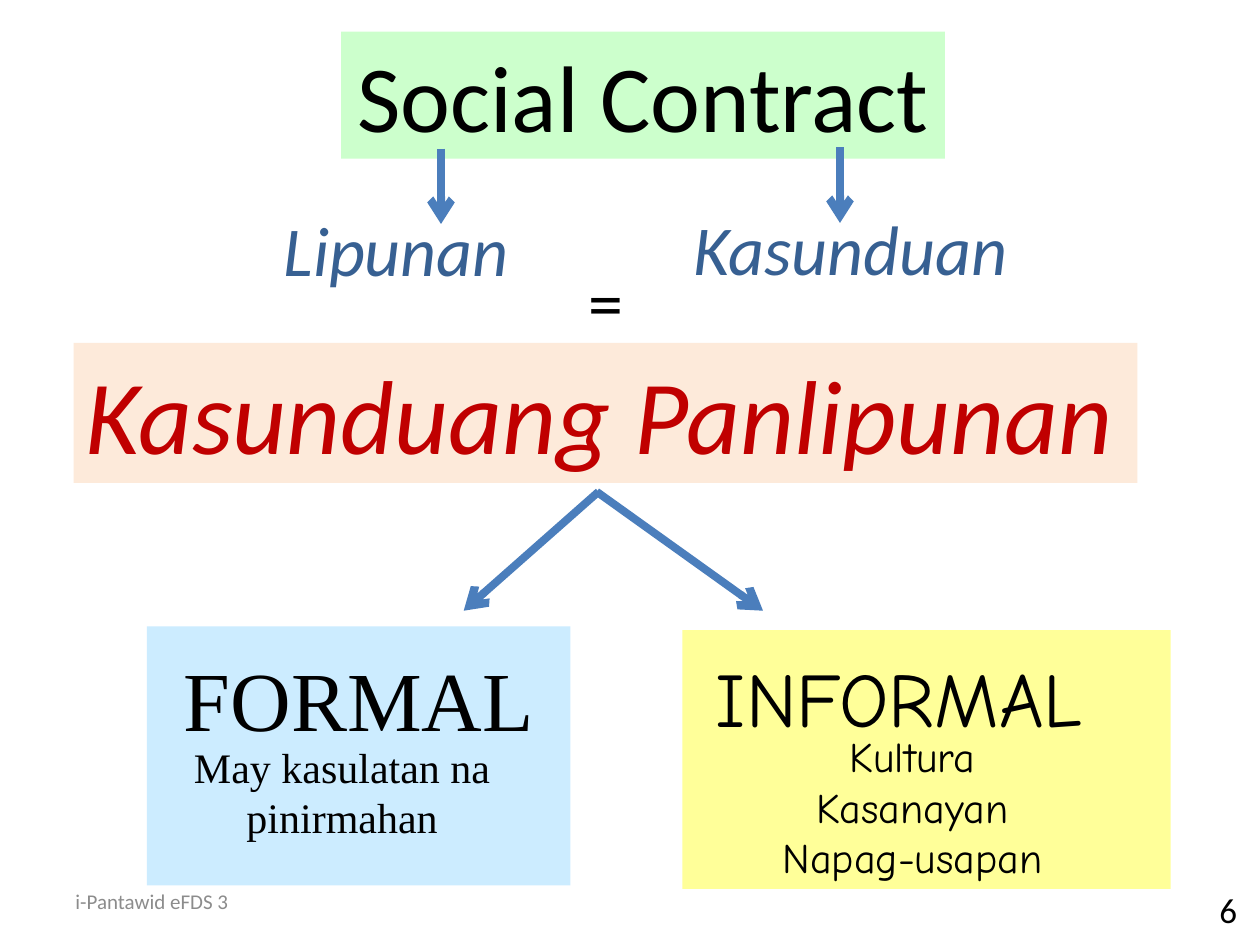
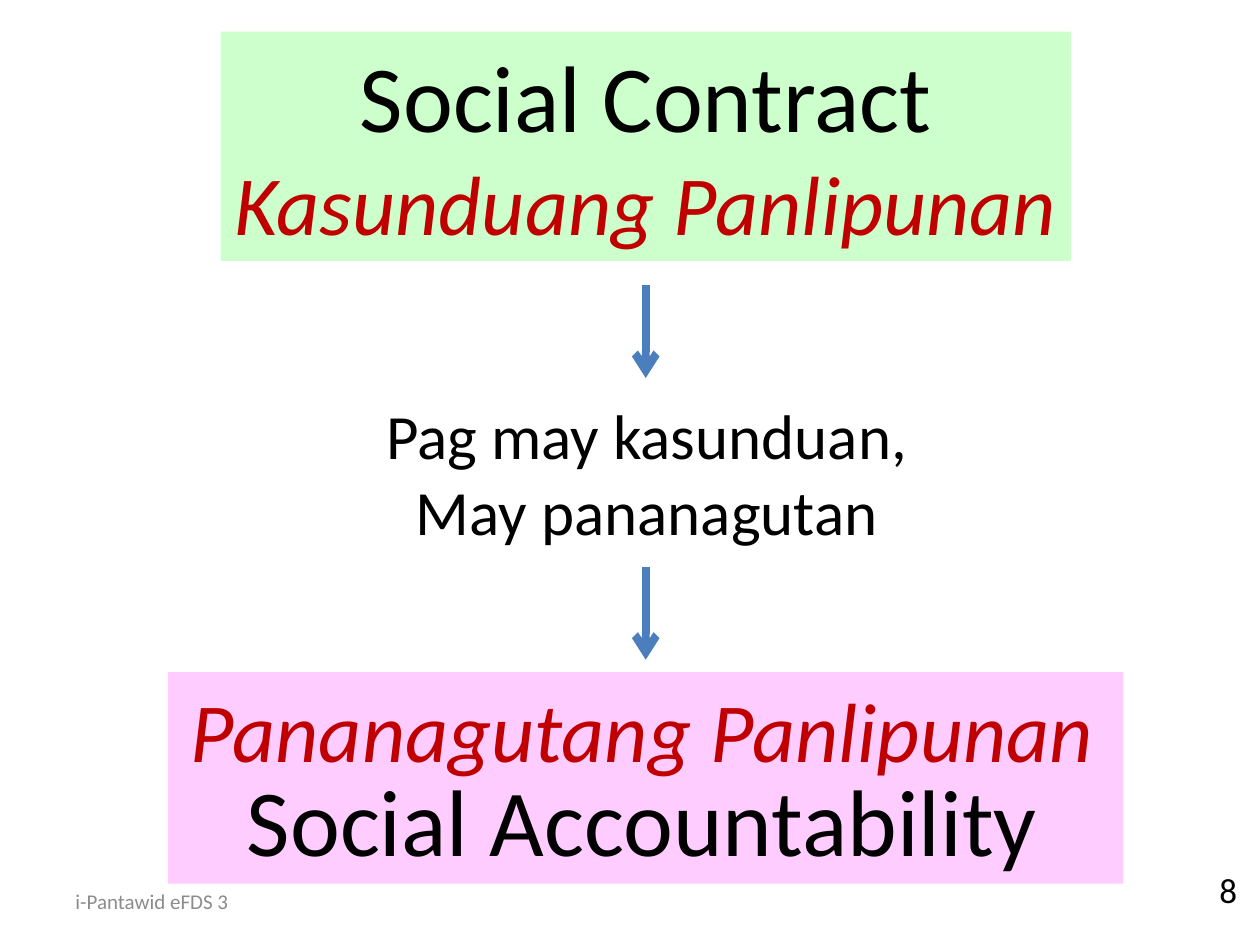
from pptx import Presentation
from pptx.dml.color import RGBColor
from pptx.enum.shapes import MSO_CONNECTOR, MSO_SHAPE
from pptx.enum.text import MSO_ANCHOR, MSO_AUTO_SIZE, PP_ALIGN
from pptx.oxml.ns import qn
from pptx.util import Pt
from lxml import etree

LEFT, MID, RIGHT = PP_ALIGN.LEFT, PP_ALIGN.CENTER, PP_ALIGN.RIGHT
TOP, CENTRE = MSO_ANCHOR.TOP, MSO_ANCHOR.MIDDLE
GROW, FIXED = MSO_AUTO_SIZE.SHAPE_TO_FIT_TEXT, MSO_AUTO_SIZE.NONE
RECT, LINE = MSO_SHAPE.RECTANGLE, MSO_CONNECTOR.STRAIGHT

BLACK = RGBColor(0x00, 0x00, 0x00)
GREY = RGBColor(0x8C, 0x8C, 0x8C)
RED = RGBColor(0xC0, 0x00, 0x00)
NAVY = RGBColor(0x37, 0x60, 0x92)
BLUE = RGBColor(0x4B, 0x7E, 0xBC)
GREEN = RGBColor(0xCC, 0xFF, 0xCC)
PEACH = RGBColor(0xFD, 0xEA, 0xDA)
YELLOW = RGBColor(0xFF, 0xFF, 0x99)
SKY = RGBColor(0xCC, 0xEC, 0xFF)
PINK = RGBColor(0xFF, 0xCC, 0xFF)

SANS, SERIF, COMIC = "Calibri", "Times New Roman", "Comic Neue"


class Deck:
    def __init__(self):
        self.file = Presentation()
        self.file.slide_width, self.file.slide_height = Pt(720), Pt(540)

    def start(self, number, top):
        self.slide = self.file.slides.add_slide(self.file.slide_layouts[5])
        self.shapes = self.slide.shapes
        self.footer("i-Pantawid eFDS 3", 36, 500.4, 12, GREY, LEFT)
        self.footer(number, 546, top, 20, BLACK, RIGHT)

    def fill_in(self, shape, lines, size, color=BLACK, font=SANS, slant=False, align=LEFT):
        frame = shape.text_frame
        frame.text = "\n".join(lines)
        frame.word_wrap = False
        frame.auto_size = GROW
        frame.vertical_anchor = TOP
        for para in frame.paragraphs:
            para.alignment = align
            self.style(para, size, color, font, slant)
        return frame

    def style(self, para, size, color, font=SANS, slant=False):
        para.font.size, para.font.name = Pt(size), font
        para.font.color.rgb = color
        para.font.italic = slant

    def footer(self, text, left, top, size, color, align):
        box = self.shapes.add_textbox(Pt(left), Pt(top), Pt(168), Pt(28.8))
        frame = self.fill_in(box, [text], size, color, align=align)
        frame.word_wrap = True
        frame.auto_size = FIXED
        frame.vertical_anchor = CENTRE

    def title(self, place, lines):
        shape = self.shapes.title
        shape.left, shape.top, shape.width, shape.height = map(Pt, place)
        shape.fill.solid()
        shape.fill.fore_color.rgb = GREEN
        return self.fill_in(shape, lines, 54, align=MID)

    def text(self, place, lines, size, **look):
        self.fill_in(self.shapes.add_textbox(*map(Pt, place)), lines, size, **look)

    def block(self, place, fill):
        shape = self.shapes.add_shape(RECT, *map(Pt, place))
        shape.shadow.inherit = False
        shape.fill.solid()
        shape.fill.fore_color.rgb = fill
        shape.line.fill.background()
        return shape

    def banner(self, place, fill, text, size, **look):
        self.fill_in(self.block(place, fill), [text], size, **look)

    def arrow(self, *ends):
        link = self.shapes.add_connector(LINE, *map(Pt, ends))
        link.line.color.rgb = BLUE
        link.line.width = Pt(4.5)
        props = link._element.spPr
        etree.SubElement(props.find(qn("a:ln")), qn("a:tailEnd"), type="arrow")
        etree.SubElement(props, qn("a:effectLst"))


def terms(deck):
    deck.start("6", 505.4)
    deck.block((390, 360, 279, 148), YELLOW)
    deck.block((84, 358, 242, 148), SKY)
    deck.title((195, 18, 345, 72.7), ["Social Contract"])
    deck.text((155, 114.5, 145, 55.7), ["Lipunan"], 40, color=NAVY, slant=True)
    deck.text((389.5, 113.8, 196, 55.7), ["Kasunduan"], 40, color=NAVY, slant=True)
    deck.banner((42, 196, 608, 80), PEACH, "Kasunduang Panlipunan", 60, color=RED, slant=True)
    deck.arrow(252, 85, 252, 128)
    deck.arrow(480, 84.2, 480, 127.4)
    deck.arrow(342, 281, 265, 349)
    deck.arrow(341, 281, 436, 349)
    deck.text((329, 144, 34, 55.7), ["="], 40)
    deck.text((98, 366.5, 217, 65.5), ["FORMAL"], 48, font=SERIF)
    deck.text((402, 368, 261, 60.5), ["INFORMAL"], 44, font=COMIC)
    deck.text((103, 420, 185, 65.5), ["May kasulatan na", "pinirmahan"], 24,
              font=SERIF, align=MID)
    deck.text((437, 414, 169, 94.5), ["Kultura", "Kasanayan", "Napag-usapan"], 24,
              font=COMIC, align=MID)


def duty(deck):
    deck.start("8", 494)
    frame = deck.title((126, 18, 486, 131), ["Social Contract", "Kasunduang Panlipunan"])
    deck.style(frame.paragraphs[1], 48, RED, slant=True)
    deck.block((96, 384, 546, 121), PINK)
    deck.banner((134, 432, 471, 72.7), PINK, "Social Accountability", 54)
    deck.banner((102, 384, 534, 65.5), PINK, "Pananagutang Panlipunan", 48, color=RED, slant=True)
    deck.text((212, 223, 315, 94.5), ["Pag may kasunduan,", "May pananagutan"], 36, align=MID)
    for top in (163, 324):
        deck.arrow(369, top, 369, top + 53)


def main():
    deck = Deck()
    terms(deck)
    duty(deck)
    deck.file.save("out.pptx")


if __name__ == "__main__":
    main()
